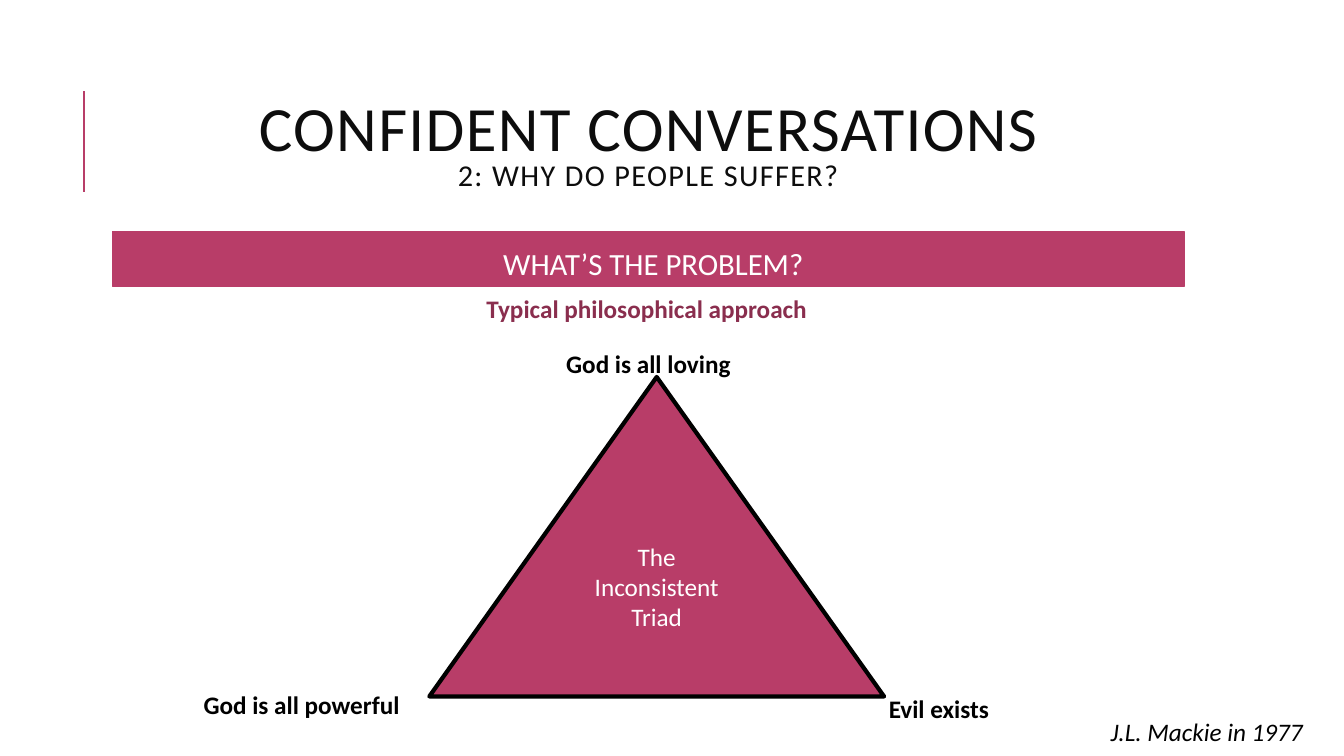
from dataclasses import dataclass

from pptx import Presentation
from pptx.dml.color import RGBColor
from pptx.enum import shapes, text
from pptx.oxml.ns import qn
from pptx.util import Cm, Pt

COLORS = {
    "rose": "B83D68",
    "plum": "8A2E4E",
    "title": "0D0D0D",
    "black": "000000",
    "white": "FFFFFF",
}
FONT = "Calibri"
LEFT, WIDTH = 2.84, 27
LABEL_HEIGHT = 1.02
ALIGN = text.PP_ALIGN
ANCHOR = text.MSO_ANCHOR


@dataclass(frozen=True)
class Label:
    text: str
    left: float
    top: float
    width: float
    color: str = "black"
    bold: bool = True
    italic: bool = False
    align: text.PP_ALIGN = ALIGN.LEFT


LABELS = [
    Label("God is all loving", 14.02, 8.66, 5.46),
    Label("God is all powerful", 4.88, 17.25, 6.25),
    Label("Evil exists", 22.15, 17.35, 3.66),
    Label("J.L. Mackie in 1977", 27.74, 17.93, 6.05, bold=False, italic=True),
    Label("Typical philosophical approach", LEFT, 7.26, 26.92,
          color="plum", align=ALIGN.CENTER),
]


def rgb(name: str) -> RGBColor:
    return RGBColor.from_string(COLORS[name])


def write_text(shape, content: str, *, size: float = 18, color: str = "black",
               bold: bool = False, italic: bool = False,
               align: text.PP_ALIGN = ALIGN.CENTER,
               line_spacing: float = 1.0, tracking: float = 0) -> None:
    """Append one paragraph per line of content."""
    frame = shape.text_frame
    frame.word_wrap = True
    for line in content.split("\n"):
        paragraph = frame.paragraphs[0] if not frame.text else frame.add_paragraph()
        paragraph.alignment = align
        paragraph.line_spacing = line_spacing
        run = paragraph.add_run()
        run.text = line
        font = run.font
        font.name, font.size = FONT, Pt(size)
        font.bold, font.italic = bold, italic
        font.color.rgb = rgb(color)
        if tracking:
            font._element.set("spc", str(int(tracking * 100)))


def add_filled_shape(slide, kind: shapes.MSO_SHAPE, left: float, top: float,
                     width: float, height: float, line_color: str, line_width: float):
    shape = slide.shapes.add_shape(kind, Cm(left), Cm(top), Cm(width), Cm(height))
    shape.shadow.inherit = False
    shape.fill.solid()
    shape.fill.fore_color.rgb = rgb("rose")
    shape.line.color.rgb = rgb(line_color)
    shape.line.width = Pt(line_width)
    return shape


def add_label(slide, label: Label) -> None:
    box = slide.shapes.add_textbox(Cm(label.left), Cm(label.top),
                                   Cm(label.width), Cm(LABEL_HEIGHT))
    write_text(box, label.text, color=label.color, bold=label.bold,
               italic=label.italic, align=label.align)


def add_heading(slide) -> None:
    # Accent rule
    rule = slide.shapes.add_connector(shapes.MSO_CONNECTOR.STRAIGHT,
                                      Cm(2.11), Cm(4.83), Cm(2.11), Cm(2.29))
    rule.line.color.rgb = rgb("rose")
    rule.line.width = Pt(1.5)
    properties = rule._element.spPr
    properties.append(properties.makeelement(qn("a:effectLst"), {}))

    # Title and subtitle
    title = slide.shapes.add_textbox(Cm(LEFT), Cm(1.63), Cm(WIDTH), Cm(4.17))
    title.text_frame.vertical_anchor = ANCHOR.MIDDLE
    for content, size in (("CONFIDENT CONVERSATIONS", 45),
                          ("2: WHY DO PEOPLE SUFFER?", 21.6)):
        write_text(title, content, size=size, color="title",
                   line_spacing=0.8, tracking=1)


def add_question_band(slide) -> None:
    band = add_filled_shape(slide, shapes.MSO_SHAPE.RECTANGLE,
                            LEFT, 5.84, WIDTH, 1.37, "rose", 0.75)
    frame = band.text_frame
    frame.vertical_anchor = ANCHOR.TOP
    frame.margin_left = Cm(0.38)
    frame.margin_top = frame.margin_right = frame.margin_bottom = Cm(0.13)
    write_text(band, "WHAT’S THE PROBLEM?", size=22, color="white", line_spacing=1.2)


def add_triad(slide) -> None:
    triangle = add_filled_shape(slide, shapes.MSO_SHAPE.ISOSCELES_TRIANGLE,
                                10.82, 9.5, 11.46, 8.05, "black", 3)
    triangle.text_frame.vertical_anchor = ANCHOR.MIDDLE
    triangle.text_frame.margin_bottom = Cm(1.65)
    write_text(triangle, "The\nInconsistent\nTriad", color="white")


def main() -> None:
    presentation = Presentation()
    presentation.slide_width, presentation.slide_height = Cm(33.87), Cm(19.05)
    slide = presentation.slides.add_slide(presentation.slide_layouts[6])
    add_heading(slide)
    add_question_band(slide)
    add_triad(slide)
    for label in LABELS:
        add_label(slide, label)
    presentation.save("out.pptx")


if __name__ == "__main__":
    main()
